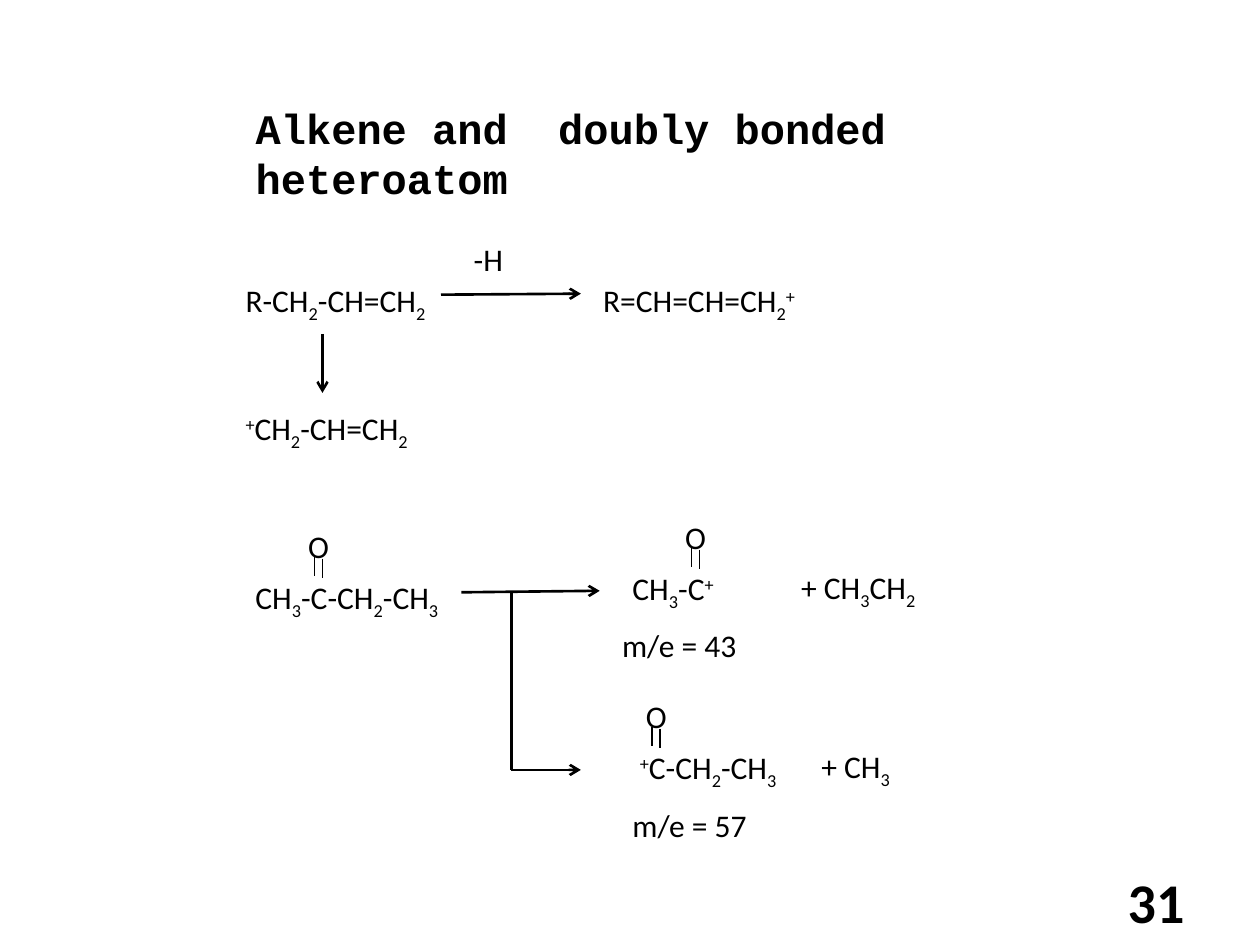
"""Build a slide on the fragmentation of alkenes and doubly bonded heteroatoms."""
from lxml.etree import SubElement
from pptx import Presentation
from pptx.dml.color import RGBColor
from pptx.enum.shapes import MSO_CONNECTOR
from pptx.enum.text import MSO_ANCHOR, MSO_AUTO_SIZE, PP_ALIGN
from pptx.oxml.ns import qn
from pptx.util import Cm, Pt

BLACK = RGBColor(0, 0, 0)
WHITE = RGBColor(255, 255, 255)
BASELINES = {"_": "-25000", "^": "30000"}
LINE_HEIGHT = 1.02

TITLE = "Alkene and  doubly bonded heteroatom"
LABELS = [
    ("R-CH|_2|-CH=CH|_2", 4.7, 5.54, 4.8),
    ("-H", 9.3, 4.72, 1.6),
    ("R=CH=CH=CH|_2|^+", 11.91, 5.54, 4.8),
    ("^+|CH|_2|-CH=CH|_2", 4.7, 8.13, 4.8),
    ("+ CH|_3|CH|_2", 15.9, 11.33, 3.2),
    ("m/e = 43", 12.29, 12.5, 3.6),
    ("+ CH|_3", 16.31, 14.94, 2),
    ("m/e = 57", 12.5, 16.13, 3.6),
]
CARBONYLS = [
    ("CH|_3|-C-CH|_2|-CH|_3", 4.9, 11.53, 0),
    ("CH|_3|-C|^+", 12.5, 11.35, 0),
    ("^+|C-CH|_2|-CH|_3", 11.71, 14.96, 0.94),
]
ARROWS = [
    (6.5, 6.73, 6.5, 7.92),
    (8.89, 5.94, 11.71, 5.92),
    (9.3, 11.94, 12.09, 11.91),
    (10.31, 15.52, 11.71, 15.52),
]
BRANCH = (10.31, 11.91, 10.31, 15.52)


def write_text(box, text, size=18, name="Calibri", bold=False,
               align=PP_ALIGN.LEFT, anchor=MSO_ANCHOR.TOP):
    frame = box.text_frame
    frame.word_wrap = True
    frame.auto_size = MSO_AUTO_SIZE.NONE
    frame.vertical_anchor = anchor
    para = frame.paragraphs[0]
    para.alignment = align
    para.line_spacing = 1.0
    para.space_before = Pt(0)
    for piece in text.split("|"):
        span = para.add_run()
        span.text = piece.lstrip("_^")
        span.font.size, span.font.name, span.font.bold = Pt(size), name, bold
        span.font.color.rgb = BLACK
        if piece[0] in BASELINES:
            span._r.get_or_add_rPr().set("baseline", BASELINES[piece[0]])


def add_label(shapes, text, left, top, width, **style):
    box = shapes.add_textbox(Cm(left), Cm(top), Cm(width), Cm(LINE_HEIGHT))
    write_text(box, text, **style)


def add_line(shapes, ends, width=1.5, arrow=False):
    line = shapes.add_connector(MSO_CONNECTOR.STRAIGHT, *map(Cm, ends))
    line.line.color.rgb = BLACK
    line.line.width = Pt(width)
    if arrow:
        SubElement(line.line._get_or_add_ln(), qn("a:tailEnd"), type="arrow")
    SubElement(line._element.spPr, qn("a:effectLst"))


def add_carbonyl(page, text, left, top, indent):
    shapes = page.shapes.add_group_shape().shapes
    add_label(shapes, text, left + indent, top, 4.8 - indent)
    for across, down in ((1.44, -0.31), (1.6, -0.27)):
        bond = left + across, top + down
        add_line(shapes, (*bond, bond[0], bond[1] + 0.39), width=1)
    add_label(shapes, "O", left + 1.06, top - 1.04, 0.8)


def main():
    deck = Presentation()
    deck.slide_width, deck.slide_height = Cm(25.4), Cm(19.05)
    page = deck.slides.add_slide(deck.slide_layouts[5])
    page.background.fill.solid()
    page.background.fill.fore_color.rgb = WHITE

    title = page.shapes.title
    title.left, title.top, title.width, title.height = map(Cm, (4.9, 1.93, 15.8, 2.3))
    write_text(title, TITLE, size=24, name="Courier New", bold=True)

    for label in LABELS:
        add_label(page.shapes, *label)
    for carbonyl in CARBONYLS:
        add_carbonyl(page, *carbonyl)
    for arrow in ARROWS:
        add_line(page.shapes, arrow, arrow=True)
    add_line(page.shapes, BRANCH)
    add_label(page.shapes, "31", 18.21, 17.65, 5.92, size=32, bold=True,
              align=PP_ALIGN.RIGHT, anchor=MSO_ANCHOR.MIDDLE)
    deck.save("out.pptx")


if __name__ == "__main__":
    main()
